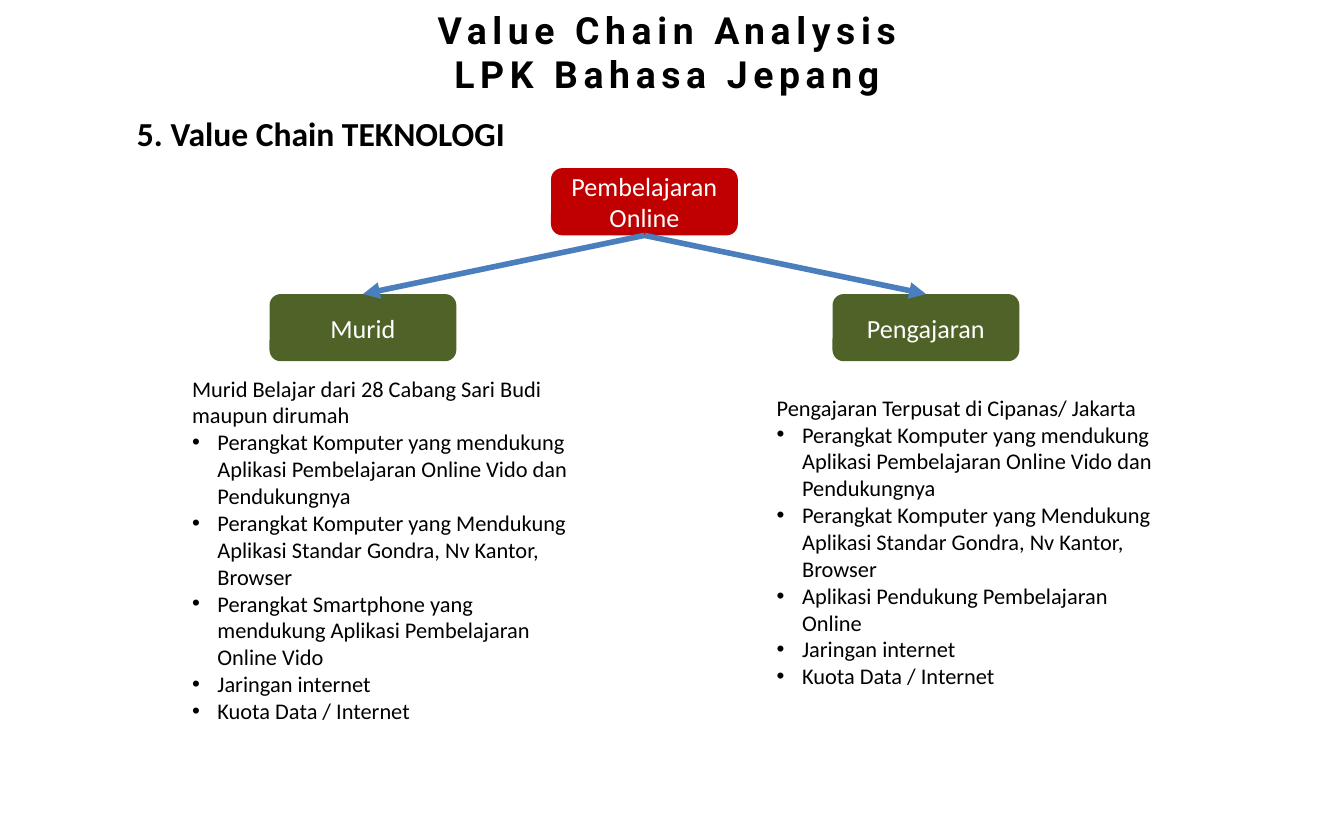
from pptx import Presentation
from pptx.dml.color import RGBColor as Rgb
from pptx.enum.shapes import MSO_CONNECTOR as Link, MSO_SHAPE as Form
from pptx.enum.text import MSO_ANCHOR as Anchor, MSO_AUTO_SIZE as Auto, PP_ALIGN as Align
from pptx.oxml.ns import qn
from pptx.util import Cm, Pt
from lxml.etree import SubElement as Sub

HUES = {"ink": "000000", "white": "FFFFFF", "red": "C00000",
        "green": "4F6228", "blue": "4B7EBC"}


class Deck:
    """Holds the style and the current slide."""
    font = "Calibri"
    box_w, box_h = 3.53, 1.27
    indent = 0.48

    def __init__(self, width, height):
        self.prs = Presentation()
        self.prs.slide_width, self.prs.slide_height = Cm(width), Cm(height)
        self.slide = self.prs.slides.add_slide(self.prs.slide_layouts[5])

    def add_text(self, para, text, size, hue="ink", bold=False, font=None):
        run = para.add_run()
        run.text = text
        run.font.name = font or self.font
        run.font.size, run.font.bold = Pt(size), bold
        run.font.color.rgb = Rgb.from_string(HUES[hue])
        return run

    def lines(self, frame, texts):
        """Yield a paragraph with its text, using the first one in place."""
        for i, text in enumerate(texts):
            yield (frame.add_paragraph() if i else frame.paragraphs[0]), text

    def title(self, texts, left, top, width, height):
        shape = self.slide.shapes.title
        shape.left, shape.top = Cm(left), Cm(top)
        shape.width, shape.height = Cm(width), Cm(height)
        frame = shape.text_frame
        frame.auto_size, frame.vertical_anchor = Auto.SHAPE_TO_FIT_TEXT, Anchor.TOP
        for para, text in self.lines(frame, texts):
            para.alignment = Align.CENTER
            run = self.add_text(para, text, 20, bold=True, font="Roboto")
            run.font._element.set("spc", "300")

    def area(self, left, top, width, height, wrap=True):
        frame = self.slide.shapes.add_textbox(
            Cm(left), Cm(top), Cm(width), Cm(height)).text_frame
        frame.word_wrap, frame.auto_size = wrap, Auto.SHAPE_TO_FIT_TEXT
        return frame

    def heading(self, text, *place):
        frame = self.area(*place, wrap=False)
        self.add_text(frame.paragraphs[0], text, 18, bold=True)

    def notes(self, lead, items, *place):
        """A lead sentence followed by bullets."""
        frame = self.area(*place)
        for para, text in self.lines(frame, [lead] + items):
            if text != lead:
                self.bullet(para)
            self.add_text(para, text, 12)

    def bullet(self, para):
        props = para._p.get_or_add_pPr()
        props.set("marL", str(Cm(self.indent)))
        props.set("indent", str(-Cm(self.indent)))
        Sub(props, qn("a:buFont")).set("typeface", "Arial")
        Sub(props, qn("a:buChar")).set("char", "•")

    def box(self, text, mid, top, hue):
        shape = self.slide.shapes.add_shape(
            Form.ROUNDED_RECTANGLE, Cm(mid - self.box_w / 2), Cm(top),
            Cm(self.box_w), Cm(self.box_h))
        shape.shadow.inherit = False
        shape.fill.solid()
        shape.fill.fore_color.rgb = Rgb.from_string(HUES[hue])
        shape.line.fill.background()
        frame = shape.text_frame
        frame.word_wrap, frame.vertical_anchor = True, Anchor.MIDDLE
        para = frame.paragraphs[0]
        para.alignment = Align.CENTER
        self.add_text(para, text, 14, "white")
        return shape

    def arrow(self, start, end):
        line = self.slide.shapes.add_connector(Link.STRAIGHT, 0, 0, 0, 0)
        line.begin_connect(start, 2)
        line.end_connect(end, 0)
        line.line.width = Pt(3)
        line.line.color.rgb = Rgb.from_string(HUES["blue"])
        props = line._element.spPr
        Sub(props.find(qn("a:ln")), qn("a:tailEnd")).set("type", "triangle")
        Sub(props, qn("a:effectLst"))


def main():
    deck = Deck(25.4, 15.88)

    # Title and heading
    deck.title(["Value Chain Analysis", "LPK Bahasa Jepang"], 0.64, 0, 23.93, 1.96)
    deck.heading("5. Value Chain TEKNOLOGI", 2.34, 2.01, 7.52, 1.02)

    # Tree of boxes
    mid, reach = 12.18, 5.32
    root = deck.box("Pembelajaran Online", mid, 3.18, "red")
    for text, side in (("Murid", -1), ("Pengajaran", 1)):
        leaf = deck.box(text, mid + side * reach, 5.56, "green")
        deck.arrow(root, leaf)

    # Needs of each side
    tools = ["Perangkat Komputer yang mendukung Aplikasi Pembelajaran Online Vido dan Pendukungnya",
             "Perangkat Komputer yang Mendukung Aplikasi Standar Gondra, Nv Kantor, Browser"]
    net = ["Jaringan internet", "Kuota Data / Internet"]
    phone = "Perangkat Smartphone yang mendukung Aplikasi Pembelajaran Online Vido"
    deck.notes("Murid Belajar dari 28 Cabang Sari Budi maupun dirumah",
               tools + [phone] + net, 3.38, 6.96, 7.92, 6.93)
    deck.notes("Pengajaran Terpusat di Cipanas/ Jakarta",
               tools + ["Aplikasi Pendukung Pembelajaran Online"] + net,
               14.43, 7.32, 7.8, 5.89)

    deck.prs.save("out.pptx")


if __name__ == "__main__":
    main()
